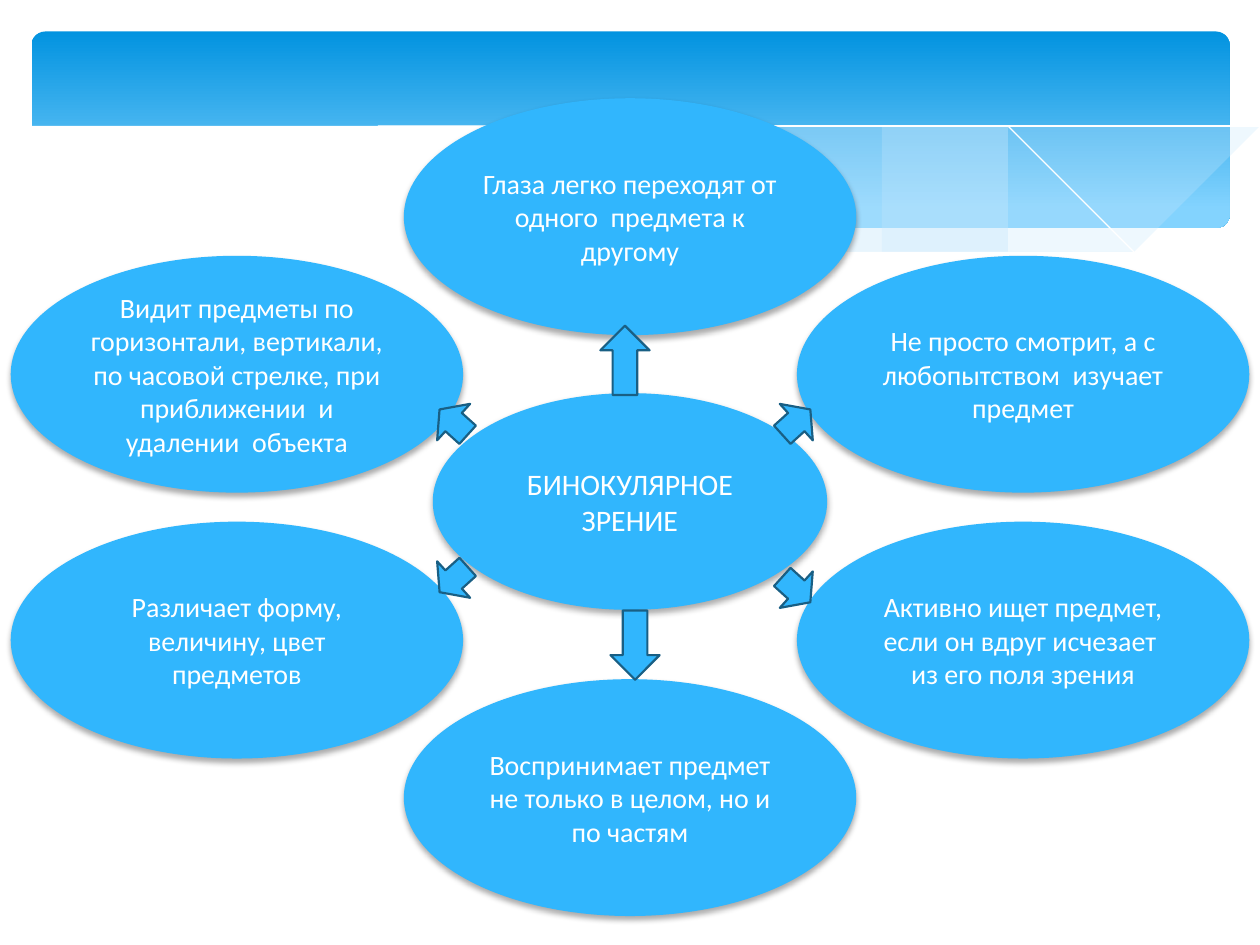
"""Build a slide with six signs of binocular vision around a central ellipse."""
import lxml.etree
import pptx
import pptx.dml.color
import pptx.enum.dml
import pptx.enum.shapes
import pptx.enum.text
import pptx.oxml.ns
import pptx.util

Inches, Pt = pptx.util.Inches, pptx.util.Pt
SHAPES = pptx.enum.shapes.MSO_SHAPE
qn = pptx.oxml.ns.qn

BLUE, OUTLINE, WHITE, HAZE = "31B6FD", "195F84", "FFFFFF", "C6E7FC"
FONT = "Calibri"

TOPIC = "БИНОКУЛЯРНОЕ ЗРЕНИЕ"
COLUMNS = (1.88, 5, 8.12)
ROWS = (1.72, 2.97, 5.08, 6.33)
SIGNS = [
    ("Активно ищет предмет, если он вдруг исчезает  из его поля зрения", 2, 2),
    ("Глаза легко переходят от одного  предмета к другому", 1, 0),
    ("Воспринимает предмет не только в целом, но и по частям", 1, 3),
    ("Не просто смотрит, а с любопытством  изучает предмет", 2, 1),
    ("Видит предметы по горизонтали, вертикали, по часовой стрелке, при приближении  и удалении  объекта", 0, 1),
    ("Различает форму, величину, цвет предметов", 0, 2),
]
LONG, SHORT, ARROW_HEIGHT = 0.55, 0.3, 0.39
ARROWS = [
    (4.96, 2.86, LONG, 270), (3.6, 4.6, SHORT, 137.9), (6.32, 4.68, SHORT, 42.1),
    (3.6, 3.35, SHORT, 222.1), (6.32, 3.35, SHORT, 317.9), (5.04, 5.12, LONG, 90),
]

RIGHT_HAZE = [
    [(6.61, 1.6), (7.29, 1.47), (8.05, 1.31), (8.61, 1.18), (9.06, 1.07), (9.48, 0.99), (9.76, 0.94)],
    [(9.76, 1.41), (9.49, 1.52), (9.13, 1.62), (8.72, 1.69), (8.24, 1.72), (7.69, 1.71), (7.19, 1.67), (6.61, 1.6)],
]
MIDDLE_HAZE = [
    [(8.93, 1.67), (8.37, 1.59), (7.75, 1.49), (7.06, 1.34), (6.29, 1.16), (5.69, 1.02),
     (5.14, 0.92), (4.65, 0.86), (4.2, 0.82), (3.8, 0.8), (3.28, 0.81), (2.86, 0.86)],
    [(2.86, 0.86), (3.42, 0.94), (4.04, 1.06), (4.91, 1.26), (5.66, 1.43), (6.34, 1.56),
     (6.95, 1.65), (7.48, 1.7), (7.96, 1.73), (8.48, 1.72), (8.93, 1.67)],
]
FALLING_LINE = [
    [(3.09, 0.9), (3.44, 0.84), (4.16, 0.81), (4.89, 0.84), (5.56, 0.91), (6.36, 1.03),
     (7.27, 1.2), (8.31, 1.45), (9.07, 1.66)],
]
RISING_LINE = [[(6.13, 1.51), (6.95, 1.3), (7.76, 1.11), (8.66, 0.93), (9.24, 0.84), (9.75, 0.8)]]
WHITE_WAVE = [
    [(0.23, 1.07), (0.46, 0.98), (0.85, 0.87), (1.32, 0.81), (1.93, 0.78), (2.5, 0.81), (3.16, 0.88),
     (3.91, 1.02), (4.47, 1.14), (5.03, 1.28), (5.79, 1.44), (6.48, 1.56), (7.08, 1.65), (7.61, 1.7),
     (8.09, 1.71), (8.63, 1.69), (9.1, 1.62), (9.5, 1.51), (9.77, 1.41)],
    [(9.77, 2.24), (0.23, 2.24)],
]


def rgb(value):
    return pptx.dml.color.RGBColor.from_string(value)


def smooth(knots, steps=5):
    padded = [knots[0], *knots, knots[-1]]
    points = [knots[0]]
    for a, b, c, d in zip(padded, padded[1:], padded[2:], padded[3:]):
        for step in range(1, steps + 1):
            t = step / steps
            points.append(tuple(
                q + t / 2 * (r - p + t * (2 * p - 5 * q + 4 * r - s + t * (3 * (q - r) + s - p)))
                for p, q, r, s in zip(a, b, c, d)
            ))
    return points


def paint(shape, fill=None, line=None, width=0):
    shape.shadow.inherit = False
    if fill:
        shape.fill.solid()
        shape.fill.fore_color.rgb = rgb(fill)
    else:
        shape.fill.background()
    if line:
        shape.line.color.rgb = rgb(line)
        shape.line.width = Pt(width)
    else:
        shape.line.fill.background()


def add_centred(slide, kind, x, y, width, height):
    return slide.shapes.add_shape(
        kind, Inches(x - width / 2), Inches(y - height / 2), Inches(width), Inches(height))


def add_curves(slide, curves, fill=None, line=None, opacity=100):
    start, *rest = [point for curve in curves for point in smooth(curve)]
    builder = slide.shapes.build_freeform(*start, scale=Inches(1))
    builder.add_line_segments(rest, close=fill is not None)
    shape = builder.convert_to_shape()
    paint(shape, fill, line)
    if opacity < 100:
        color = shape.fill._xPr.find(qn("a:solidFill"))[0]
        lxml.etree.SubElement(color, qn("a:alpha"), val=str(opacity * 1000))


def add_banner(slide):
    banner = slide.shapes.add_shape(
        SHAPES.ROUNDED_RECTANGLE, Inches(0.25), Inches(0.25), Inches(9.51), Inches(1.56))
    banner.adjustments[0] = 0.07
    paint(banner)
    banner.fill.gradient()
    banner.fill.gradient_angle = 270
    for stop, (position, color) in zip(banner.fill.gradient_stops, [(0, "0293E0"), (0.9, "83D3FE")]):
        stop.position = position
        stop.color.rgb = rgb(color)
    add_curves(slide, RIGHT_HAZE, HAZE, opacity=29)
    add_curves(slide, MIDDLE_HAZE, HAZE, opacity=40)
    add_curves(slide, FALLING_LINE, line=WHITE)
    add_curves(slide, RISING_LINE, line=WHITE)
    add_curves(slide, WHITE_WAVE, WHITE)


def add_ellipse(slide, text, x, y, width, height, size):
    ellipse = add_centred(slide, SHAPES.OVAL, x, y, width, height)
    paint(ellipse, BLUE)
    effects = ellipse._element.spPr.find(qn("a:effectLst"))
    shadow = lxml.etree.SubElement(
        effects, qn("a:outerShdw"), blurRad=str(Pt(3.5)), dist=str(Pt(2.2)), dir="5400000", rotWithShape="0")
    color = lxml.etree.SubElement(shadow, qn("a:srgbClr"), val="000000")
    lxml.etree.SubElement(color, qn("a:alpha"), val="32000")
    frame = ellipse.text_frame
    frame.word_wrap = True
    frame.vertical_anchor = pptx.enum.text.MSO_ANCHOR.MIDDLE
    frame.margin_left = frame.margin_right = Inches(0.06)
    paragraph = frame.paragraphs[0]
    paragraph.text = text
    paragraph.alignment = pptx.enum.text.PP_ALIGN.CENTER
    paragraph.font.name = FONT
    paragraph.font.size = Pt(size)
    paragraph.font.color.rgb = rgb(WHITE)


def main():
    deck = pptx.Presentation()
    deck.slide_width, deck.slide_height = Inches(10), Inches(7.5)
    slide = deck.slides.add_slide(deck.slide_layouts[6])
    add_banner(slide)
    add_ellipse(slide, TOPIC, COLUMNS[1], 3.98, 3.13, 1.72, 17)
    for text, column, row in SIGNS:
        add_ellipse(slide, text, COLUMNS[column], ROWS[row], 3.59, 1.88, 16)
    for x, y, length, angle in ARROWS:
        arrow = add_centred(slide, SHAPES.RIGHT_ARROW, x, y, length, ARROW_HEIGHT)
        arrow.rotation = angle
        paint(arrow, BLUE, OUTLINE, 1.25)
    deck.save("out.pptx")


if __name__ == "__main__":
    main()
